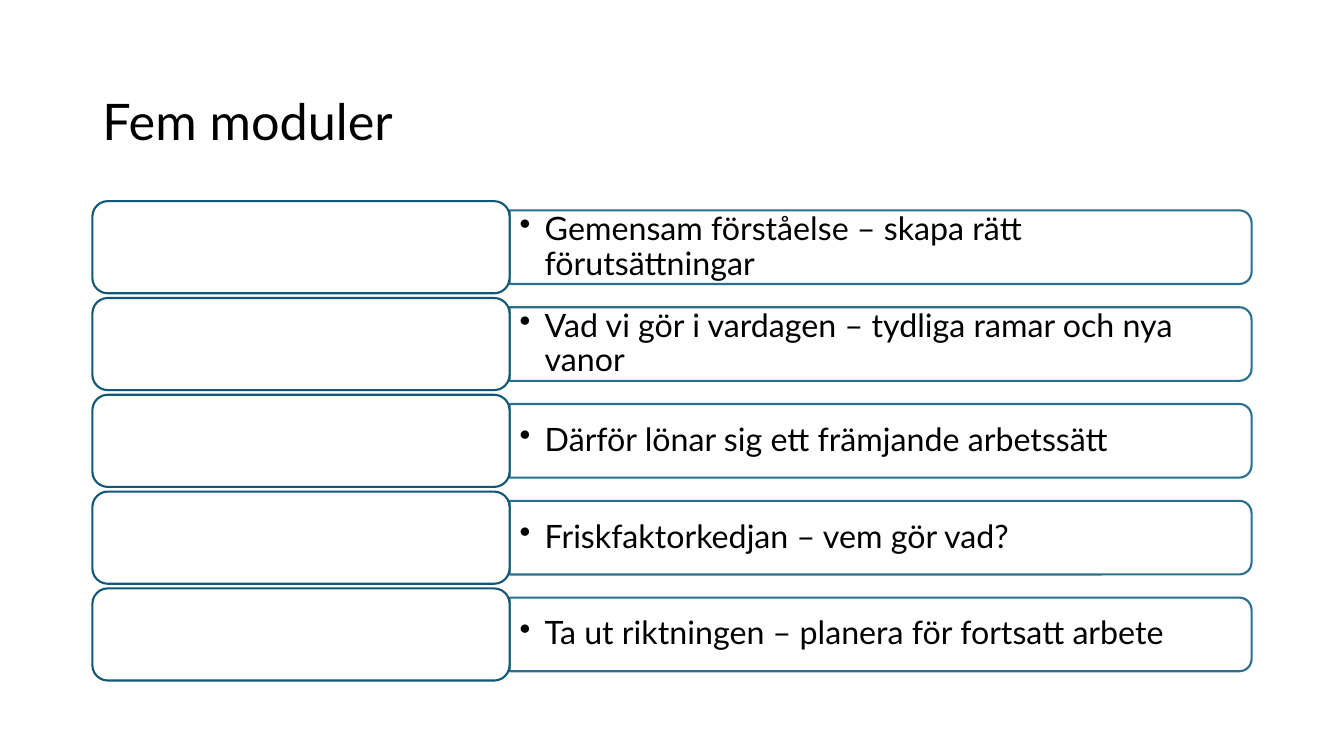
from lxml.etree import SubElement
from pptx import Presentation
from pptx.dml.color import RGBColor
from pptx.enum.shapes import MSO_SHAPE
from pptx.enum.text import MSO_ANCHOR, PP_ALIGN
from pptx.oxml.ns import qn
from pptx.util import Pt

COLORS = {"text": "000000", "fill": "FFFFFF", "bar": "156082", "tab": "135776"}
FONT = "Lato"
MODULES = [
    "Gemensam förståelse – skapa rätt förutsättningar",
    "Vad vi gör i vardagen – tydliga ramar och nya vanor",
    "Därför lönar sig ett främjande arbetssätt",
    "Friskfaktorkedjan – vem gör vad?",
    "Ta ut riktningen – planera för fortsatt arbete",
]
TAB_W, ROW_H, STEP = 298, 65.8, 69.15
BAR_H, TEXT_H = 52.6, 47.5


def color(name):
    return RGBColor.from_string(COLORS[name])


def style(para, size):
    para.alignment = PP_ALIGN.LEFT
    para.line_spacing = 0.9
    para.font.name = FONT
    para.font.size = Pt(size)
    para.font.color.rgb = color("text")


def fade(fill):
    """Make a solid fill 90 % opaque."""
    SubElement(fill.find(".//" + qn("a:srgbClr")), qn("a:alpha"), val="90000")


def add_box(slide, kind, left, top, width, height, line):
    box = slide.shapes.add_shape(kind, Pt(left), Pt(top), Pt(width), Pt(height))
    box.shadow.inherit = False
    box.fill.solid()
    box.fill.fore_color.rgb = color("fill")
    box.line.color.rgb = color(line)
    box.line.width = Pt(1.5)
    return box


def add_title(slide, left, top, width, height):
    title = slide.shapes.title
    title.left, title.top = Pt(left), Pt(top)
    title.width, title.height = Pt(width), Pt(height)
    frame = title.text_frame
    frame.text = "Fem moduler"
    frame.vertical_anchor = MSO_ANCHOR.MIDDLE
    style(frame.paragraphs[0], 36)


def add_label(slide, text, left, top, width, height):
    label = slide.shapes.add_textbox(Pt(left), Pt(top), Pt(width), Pt(height))
    frame = label.text_frame
    frame.word_wrap = True
    frame.vertical_anchor = MSO_ANCHOR.MIDDLE
    para = frame.paragraphs[0]
    para.text = text
    para.level = 1
    style(para, 23)
    # Bullet with hanging indent
    props = para._p.get_or_add_pPr()
    props.set("marL", str(Pt(18)))
    props.set("indent", str(-Pt(18)))
    SubElement(props, qn("a:buChar"), char="•")


def add_module(slide, text, left, top, width):
    mid = top + ROW_H / 2
    start, span = left + TAB_W, width - TAB_W
    # Bar: an upright shape turned so that its round end faces right
    bar = add_box(slide, MSO_SHAPE.ROUND_2_SAME_RECTANGLE,
                  start + (span - BAR_H) / 2, mid - span / 2, BAR_H, span, "bar")
    bar.rotation = 90
    props = bar._element.spPr
    fade(props.find(qn("a:solidFill")))
    fade(props.find(qn("a:ln")))
    add_label(slide, text, start, mid - TEXT_H / 2, span - 3, TEXT_H)
    # Empty tab on the left
    add_box(slide, MSO_SHAPE.ROUNDED_RECTANGLE, left, top, TAB_W, ROW_H, "tab")


def add_list(slide, left, top, width):
    for row, text in enumerate(MODULES):
        add_module(slide, text, left, top + row * STEP, width)


def main():
    deck = Presentation()
    deck.slide_width, deck.slide_height = Pt(960), Pt(540)
    slide = deck.slides.add_slide(deck.slide_layouts[5])
    add_title(slide, 66, 44, 828, 89)
    add_list(slide, 66, 143.7, 828)
    deck.save("out.pptx")


if __name__ == "__main__":
    main()
